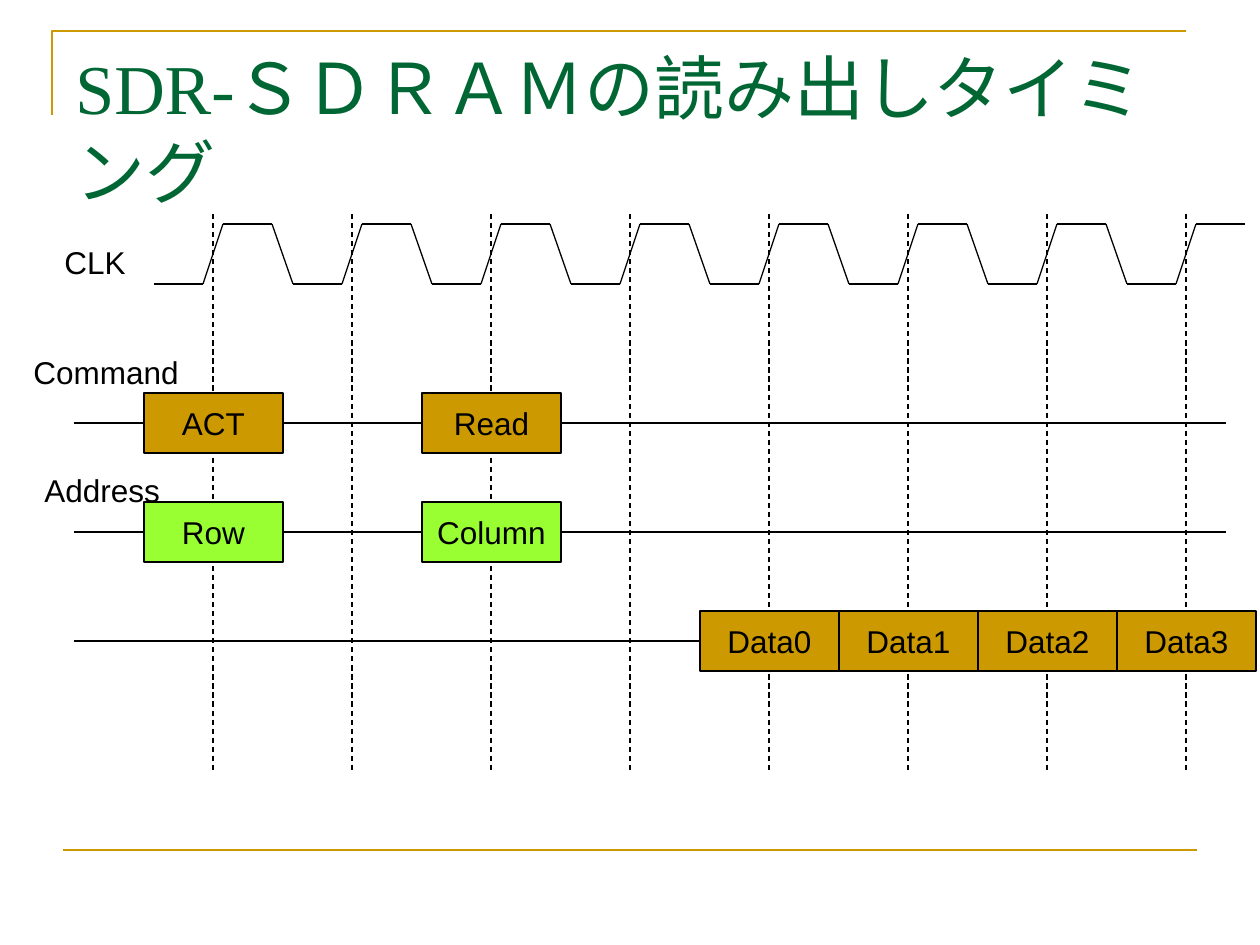
from dataclasses import dataclass
from itertools import pairwise

from lxml.etree import SubElement
from pptx import Presentation
from pptx.dml.color import RGBColor
from pptx.enum.dml import MSO_LINE
from pptx.enum.shapes import MSO_CONNECTOR, MSO_SHAPE
from pptx.enum.text import MSO_ANCHOR, MSO_AUTO_SIZE, PP_ALIGN
from pptx.oxml.ns import qn
from pptx.util import Emu, Pt

PX_PER_INCH = 126
GOLD = RGBColor(0xCC, 0x99, 0x00)
LIME = RGBColor(0x99, 0xFF, 0x33)
GREEN = RGBColor(0x00, 0x66, 0x33)
BLACK = RGBColor(0x00, 0x00, 0x00)

# Timing grid, in px
CYCLES = 8
PERIOD = 139
FIRST_EDGE = 213
EDGE_TOP, EDGE_BOTTOM = 214, 770
CLOCK_START, CLOCK_HIGH, CLOCK_LOW = 154, 224, 284
RISE_START, RISE_END, FALL_START = 49, 69, 118
BUS_LEFT, BUS_RIGHT = 74, 1226
FIRST_SLOT = 144
SLOT_HEIGHT = 60

LABEL_FONT = {"name": "Arial", "size": Pt(18)}
TITLE_FONT = {"name": "Times New Roman", "size": Pt(40)}
LABEL_FRAME = {"word_wrap": False, "auto_size": MSO_AUTO_SIZE.SHAPE_TO_FIT_TEXT}
SLOT_FRAME = {"word_wrap": False, "vertical_anchor": MSO_ANCHOR.MIDDLE}
TITLE_FRAME = {"word_wrap": True, "vertical_anchor": MSO_ANCHOR.TOP}


@dataclass(frozen=True)
class Label:
    text: str
    left: int
    top: int
    width: int


@dataclass(frozen=True)
class Bus:
    middle: int
    color: RGBColor
    slots: dict[int, str]  # clock cycle -> content


LABELS = [
    Label("CLK", 52, 237, 90),
    Label("Command", 21, 347, 176),
    Label("Address", 32, 465, 145),
]
BUSES = [
    Bus(423, GOLD, {0: "ACT", 2: "Read"}),
    Bus(532, LIME, {0: "Row", 2: "Column"}),
    Bus(641, GOLD, {4 + i: f"Data{i}" for i in range(4)}),
]


def px(length: int) -> Emu:
    return Emu(round(length * 914400 / PX_PER_INCH))


def set_values(target, values: dict) -> None:
    for key, value in values.items():
        setattr(target, key, value)


def draw_line(slide, start: tuple[int, int], end: tuple[int, int],
              color: RGBColor = BLACK, width: float = 0.75, dash=None) -> None:
    line = slide.shapes.add_connector(
        MSO_CONNECTOR.STRAIGHT, *map(px, start + end))
    line.line.color.rgb = color
    set_values(line.line, {"width": Pt(width), "dash_style": dash})
    SubElement(line._element.spPr, qn("a:effectLst"))


def write(shape, text: str, frame: dict, font: dict,
          color: RGBColor = BLACK, align=PP_ALIGN.LEFT) -> None:
    set_values(shape.text_frame, frame)
    paragraph = shape.text_frame.paragraphs[0]
    paragraph.alignment = align
    run = paragraph.add_run()
    run.text = text
    set_values(run.font, font)
    run.font.color.rgb = color


def draw_frame(slide) -> None:
    builder = slide.shapes.build_freeform(px(52), px(115), scale=1.0)
    builder.add_line_segments(
        [(px(52), px(31)), (px(1186), px(31))], close=False)
    corner = builder.convert_to_shape()
    corner.shadow.inherit = False
    corner.fill.background()
    corner.line.color.rgb = GOLD
    corner.line.width = Pt(1.5)
    draw_line(slide, (63, 850), (1197, 850), GOLD, 1.5)


def draw_clock(slide) -> None:
    points = []
    for cycle in range(CYCLES):
        left = CLOCK_START + cycle * PERIOD
        points += [(left, CLOCK_LOW), (left + RISE_START, CLOCK_LOW),
                   (left + RISE_END, CLOCK_HIGH), (left + FALL_START, CLOCK_HIGH)]
    for start, end in pairwise(points):
        draw_line(slide, start, end)


def draw_edges(slide) -> None:
    for cycle in range(CYCLES):
        x = FIRST_EDGE + cycle * PERIOD
        draw_line(slide, (x, EDGE_TOP), (x, EDGE_BOTTOM), dash=MSO_LINE.DASH)


def draw_label(slide, label: Label) -> None:
    box = slide.shapes.add_textbox(
        px(label.left), px(label.top), px(label.width), px(50))
    write(box, label.text, LABEL_FRAME, LABEL_FONT)


def draw_bus(slide, bus: Bus) -> None:
    draw_line(slide, (BUS_LEFT, bus.middle), (BUS_RIGHT, bus.middle))
    for cycle, content in bus.slots.items():
        slot = slide.shapes.add_shape(
            MSO_SHAPE.RECTANGLE, px(FIRST_SLOT + cycle * PERIOD),
            px(bus.middle - SLOT_HEIGHT // 2), px(PERIOD), px(SLOT_HEIGHT))
        slot.shadow.inherit = False
        slot.fill.solid()
        slot.fill.fore_color.rgb = bus.color
        slot.line.color.rgb = BLACK
        slot.line.width = Pt(0.75)
        write(slot, content, SLOT_FRAME, LABEL_FONT, align=PP_ALIGN.CENTER)


def main() -> None:
    deck = Presentation()
    set_values(deck, {"slide_width": px(1260), "slide_height": px(945)})
    slide = deck.slides.add_slide(deck.slide_layouts[6])

    # Frame and title
    draw_frame(slide)
    title = slide.shapes.add_textbox(px(63), px(38), px(1134), px(157))
    write(title, "SDR-ＳＤＲＡＭの読み出しタイミング", TITLE_FRAME, TITLE_FONT, GREEN)

    # Clock signal and its rising edges
    draw_clock(slide)
    draw_edges(slide)

    # Command, address and data
    for bus in BUSES:
        draw_bus(slide, bus)
    for label in LABELS:
        draw_label(slide, label)

    deck.save("out.pptx")


if __name__ == "__main__":
    main()
